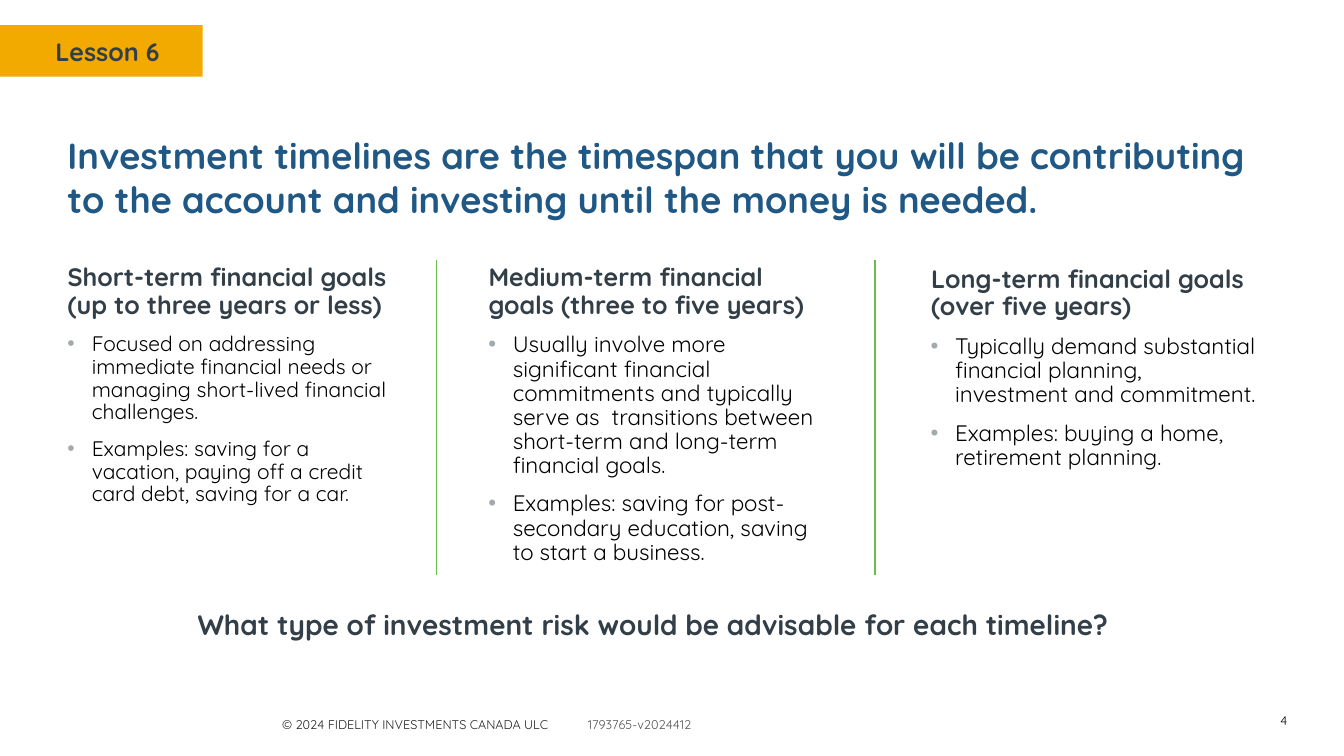
from dataclasses import dataclass

from lxml import etree
from pptx import Presentation
from pptx import util as u
from pptx.dml.color import RGBColor
from pptx.enum import shapes, text
from pptx.oxml import ns

Pt = u.Pt


@dataclass(frozen=True)
class Theme:
    face: str = "Quicksand"
    gold: str = "F2A900"
    blue: str = "205885"
    slate: str = "333F48"
    green: str = "6ABD4A"
    dot: str = "A2AAAD"
    black: str = "000000"
    ink: str = "222222"
    gray: str = "545454"
    title: int = 26
    ask: int = 20
    head: int = 18
    large: int = 16
    small: int = 15
    foot: int = 9


T = Theme()

GOALS = [
    ((40.5, 185.8), T.small, "Short-term financial goals (up to three years or less)", [
        "Focused on addressing immediate financial needs or managing short-lived financial challenges.",
        "Examples: saving for a vacation, paying off a credit card debt, saving for a car."]),
    ((341.2, 185.8), T.large, "Medium-term financial goals (three to five years)", [
        "Usually involve more significant financial commitments and typically serve as  "
        "transitions between short-term and long-term financial goals.",
        "Examples: saving for post-secondary education, saving to start a business."]),
    ((657.2, 187), T.large, "Long-term financial goals (over five years)", [
        "Typically demand substantial financial planning, investment and commitment.",
        "Examples: buying a home, retirement planning."]),
]


def apply(item, values):
    for name, value in values.items():
        setattr(item, name, value)


def write(para, words, size, color, bold=False):
    run = para.add_run()
    run.text = words
    apply(run.font, {"name": T.face, "size": Pt(size), "bold": bold})
    run.font.color.rgb = RGBColor.from_string(color)


def add_tag(para, tag, **values):
    """Append one drawing element to the paragraph's properties."""
    return etree.SubElement(para, ns.qn(tag), values)


def add_box(slide, left, top, width, height):
    box = slide.shapes.add_textbox(Pt(left), Pt(top), Pt(width), Pt(height))
    box.text_frame.word_wrap = True
    return box.text_frame


def add_label(slide, place, words, size, color, bold=False, **form):
    para = add_box(slide, *place).paragraphs[0]
    apply(para, form)
    write(para, words, size, color, bold)
    return para


def add_title(slide, words):
    title = slide.shapes.title
    apply(title, {"left": Pt(41), "top": Pt(91.4), "width": Pt(878.4), "height": Pt(41.8)})
    frame = title.text_frame
    apply(frame, {"word_wrap": True, "vertical_anchor": text.MSO_ANCHOR.TOP,
                  "auto_size": text.MSO_AUTO_SIZE.NONE})
    para = frame.paragraphs[0]
    para.alignment = text.PP_ALIGN.LEFT
    write(para, words, T.title, T.blue, True)


def add_banner(slide, words):
    band = slide.shapes.add_shape(shapes.MSO_SHAPE.RECTANGLE, 0, Pt(18), Pt(144.7), Pt(36.7))
    band.shadow.inherit = False
    band.fill.solid()
    band.fill.fore_color.rgb = RGBColor.from_string(T.gold)
    band.line.fill.background()
    add_label(slide, (32.4, 22.3, 94.3, 28.8), words, T.head, T.slate, True)


def add_bullet(frame, words, size):
    para = frame.add_paragraph()
    apply(para, {"line_spacing": 0.9, "space_before": Pt(10)})
    props = para._p.get_or_add_pPr()
    apply_indent = {"marL": Pt(18), "indent": Pt(-17.5)}
    for name, value in apply_indent.items():
        props.set(name, str(int(value)))
    add_tag(add_tag(props, "a:buClr"), "a:srgbClr", val=T.dot)
    add_tag(props, "a:buFont", typeface="Arial")
    add_tag(props, "a:buChar", char="•")
    write(para, words, size, T.black)


def add_goal(slide, place, size, head, points):
    frame = add_box(slide, *place, 250.5, 235.4)
    para = frame.paragraphs[0]
    para.line_spacing = 0.9
    para._p.get_or_add_pPr().set("marL", str(int(Pt(0.7))))
    write(para, head, T.head, T.slate, True)
    for point in points:
        add_bullet(frame, point, size)


def add_rule(slide, left):
    rule = slide.shapes.add_connector(
        shapes.MSO_CONNECTOR.STRAIGHT, Pt(left), Pt(185.8), Pt(left), Pt(410.8))
    rule.line.width = Pt(1)
    rule.line.color.rgb = RGBColor.from_string(T.green)
    add_tag(rule._element.spPr, "a:effectLst")


def add_foot(slide):
    para = add_box(slide, 194.4, 508.3, 309.6, 18).paragraphs[0]
    tabs = add_tag(para._p.get_or_add_pPr(), "a:tabLst")
    add_tag(tabs, "a:tab", pos=str(int(Pt(218.5))), algn="l")
    write(para, "© 2024 FIDELITY INVESTMENTS CANADA ULC\t", T.foot, T.ink)
    write(para, "1793765-v2024412", T.foot, T.gray)

    frame = add_box(slide, 876.2, 508.3, 50.4, 13)
    frame.vertical_anchor = text.MSO_ANCHOR.MIDDLE
    page = frame.paragraphs[0]
    page.alignment = text.PP_ALIGN.RIGHT
    write(page, "4", T.foot, T.black)


def main():
    deck = Presentation()
    apply(deck, {"slide_width": Pt(960), "slide_height": Pt(540)})
    slide = deck.slides.add_slide(deck.slide_layouts.get_by_name("Title Only"))
    add_banner(slide, "Lesson 6")
    add_title(slide, "Investment timelines are the timespan that you will be contributing "
                     "to the account and investing until the money is needed.")
    for goal in GOALS:
        add_goal(slide, *goal)
    for left in (311.8, 625):
        add_rule(slide, left)
    add_label(slide, (119.5, 430.6, 694, 31.7),
              "What type of investment risk would be advisable for each timeline?",
              T.ask, T.slate, True, alignment=text.PP_ALIGN.CENTER)
    add_foot(slide)
    deck.save("out.pptx")


if __name__ == "__main__":
    main()
